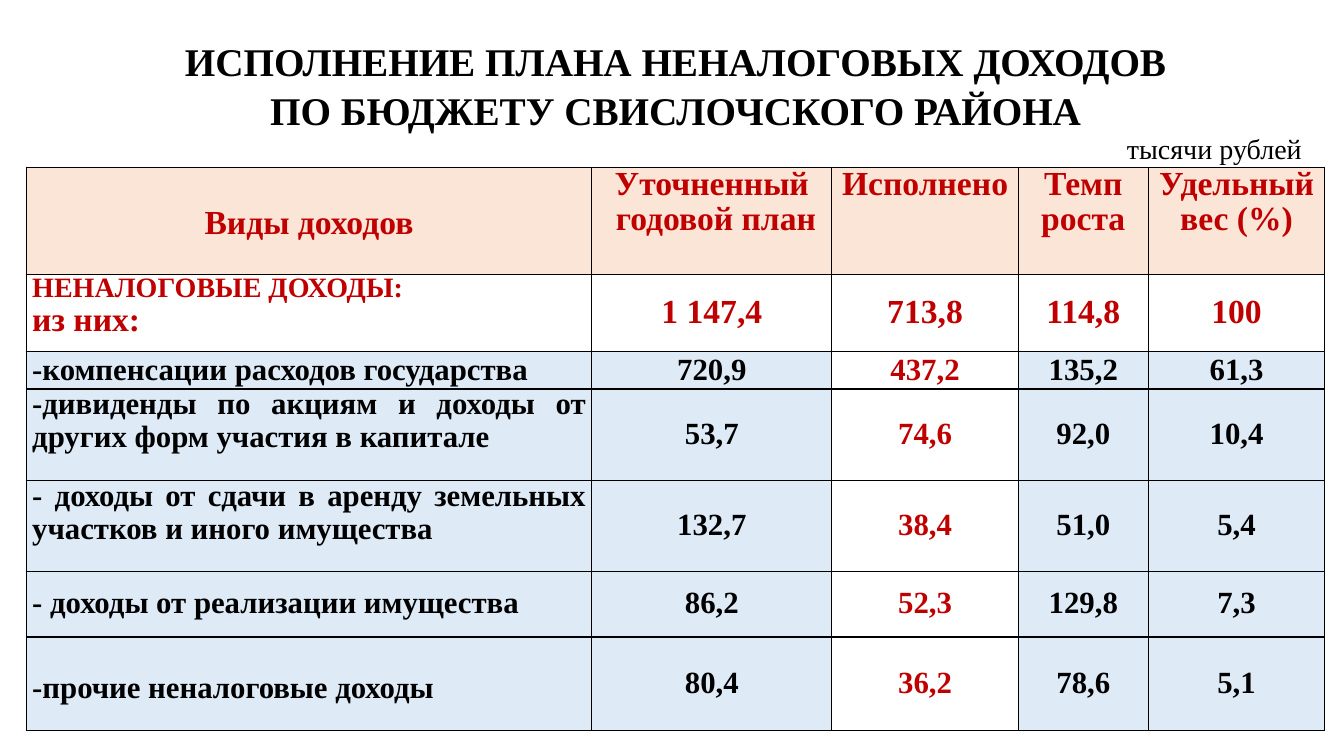
from lxml import etree
from pptx import Presentation
from pptx.dml.color import RGBColor
from pptx.enum.text import MSO_ANCHOR, PP_ALIGN
from pptx.oxml.ns import qn
from pptx.util import Inches, Pt

TITLE = ["ИСПОЛНЕНИЕ ПЛАНА НЕНАЛОГОВЫХ ДОХОДОВ", "ПО БЮДЖЕТУ СВИСЛОЧСКОГО РАЙОНА"]
UNIT = "тысячи рублей"
HEADINGS = [
    ["Виды доходов"],
    ["Уточненный", " годовой план"],
    ["Исполнено"],
    ["Темп роста"],
    ["Удельный вес (%)"],
]
TOTAL_NAME = [("НЕНАЛОГОВЫЕ ДОХОДЫ:", 20), ("из них:", 24)]
TOTALS = ["1 147,4", "713,8", "114,8", "100"]
INCOMES = [
    ("-компенсации расходов государства", "720,9", "437,2", "135,2", "61,3"),
    ("-дивиденды по акциям и доходы от других форм участия в капитале",
     "53,7", "74,6", "92,0", "10,4"),
    ("- доходы от сдачи в аренду земельных участков и иного имущества",
     "132,7", "38,4", "51,0", "5,4"),
    ("- доходы от реализации имущества", "86,2", "52,3", "129,8", "7,3"),
    ("-прочие неналоговые доходы", "80,4", "36,2", "78,6", "5,1"),
]
COLUMN_WIDTHS = [5.61, 2.38, 1.85, 1.29, 1.75]
ROW_HEIGHTS = [1.06, 0.77, 0.37, 0.91, 0.9, 0.65, 0.93]
DONE_COLUMN = 2
TOP_NAME_ROWS = (3, 4)

FONT = "Times New Roman"
BLACK = RGBColor(0, 0, 0)
WHITE = RGBColor(255, 255, 255)
RED = RGBColor(0xC0, 0, 0)
PEACH = RGBColor(0xFB, 0xE5, 0xD6)
PALE_BLUE = RGBColor(0xDE, 0xEB, 0xF7)
CENTER, RIGHT, JUSTIFY = PP_ALIGN.CENTER, PP_ALIGN.RIGHT, PP_ALIGN.JUSTIFY
TOP, MIDDLE = MSO_ANCHOR.TOP, MSO_ANCHOR.MIDDLE


def write(frame, lines, color, align, bold=True, spacing=0.95):
    for index, (text, size) in enumerate(lines):
        paragraph = frame.add_paragraph() if index else frame.paragraphs[0]
        paragraph.alignment = align
        paragraph.line_spacing = spacing
        run = paragraph.add_run()
        run.text = text
        run.font.name = FONT
        run.font.size = Pt(size)
        run.font.bold = bold
        run.font.color.rgb = color


def add_label(left, top, width, height):
    frame = slide.shapes.add_textbox(*map(Inches, (left, top, width, height))).text_frame
    frame.word_wrap = True
    frame.vertical_anchor = MIDDLE
    return frame


def outline(cell):
    properties = cell._tc.get_or_add_tcPr()
    for side in ("a:lnL", "a:lnR", "a:lnT", "a:lnB"):
        line = etree.SubElement(properties, qn(side), w=str(Pt(1)))
        fill = etree.SubElement(line, qn("a:solidFill"))
        etree.SubElement(fill, qn("a:srgbClr"), val=str(BLACK))


def fill_cell(row, column, lines, fill, color, align, anchor, drop=0):
    cell = table.cell(row, column)
    outline(cell)
    cell.fill.solid()
    cell.fill.fore_color.rgb = fill
    cell.margin_left = cell.margin_right = Inches(0.06)
    cell.margin_top, cell.margin_bottom = Inches(drop), 0
    cell.vertical_anchor = anchor
    write(cell.text_frame, lines, color, align)


presentation = Presentation()
presentation.slide_width, presentation.slide_height = Inches(13.33), Inches(7.5)
slide = presentation.slides.add_slide(presentation.slide_layouts[6])

table = slide.shapes.add_table(
    len(ROW_HEIGHTS), len(COLUMN_WIDTHS), Inches(0.26), Inches(1.66),
    Inches(sum(COLUMN_WIDTHS)), Inches(sum(ROW_HEIGHTS))).table
for column, width in zip(table.columns, COLUMN_WIDTHS):
    column.width = Inches(width)
for row, height in zip(table.rows, ROW_HEIGHTS):
    row.height = Inches(height)

for column, heading in enumerate(HEADINGS):
    anchor, drop = (TOP, 0) if column else (MIDDLE, 0.06)
    fill_cell(0, column, [(line, 24) for line in heading], PEACH, RED, CENTER, anchor, drop)

fill_cell(1, 0, TOTAL_NAME, WHITE, RED, JUSTIFY, TOP)
for column, total in enumerate(TOTALS, 1):
    fill_cell(1, column, [(total, 24)], WHITE, RED, CENTER, MIDDLE)

for row, (income, *amounts) in enumerate(INCOMES, 2):
    anchor = TOP if row in TOP_NAME_ROWS else MIDDLE
    drop = 0.1 if row == len(ROW_HEIGHTS) - 1 else 0
    fill_cell(row, 0, [(income, 22)], PALE_BLUE, BLACK, JUSTIFY, anchor, drop)
    for column, amount in enumerate(amounts, 1):
        fill, color = (WHITE, RED) if column == DONE_COLUMN else (PALE_BLUE, BLACK)
        fill_cell(row, column, [(amount, 22)], fill, color, CENTER, MIDDLE)

write(add_label(0.29, 0.32, 12.82, 1.04), [(line, 28) for line in TITLE], BLACK, CENTER, spacing=1.04)
write(add_label(10.01, 1.24, 3, 0.46), [(UNIT, 20)], BLACK, RIGHT, bold=False, spacing=1)

presentation.save("out.pptx")
